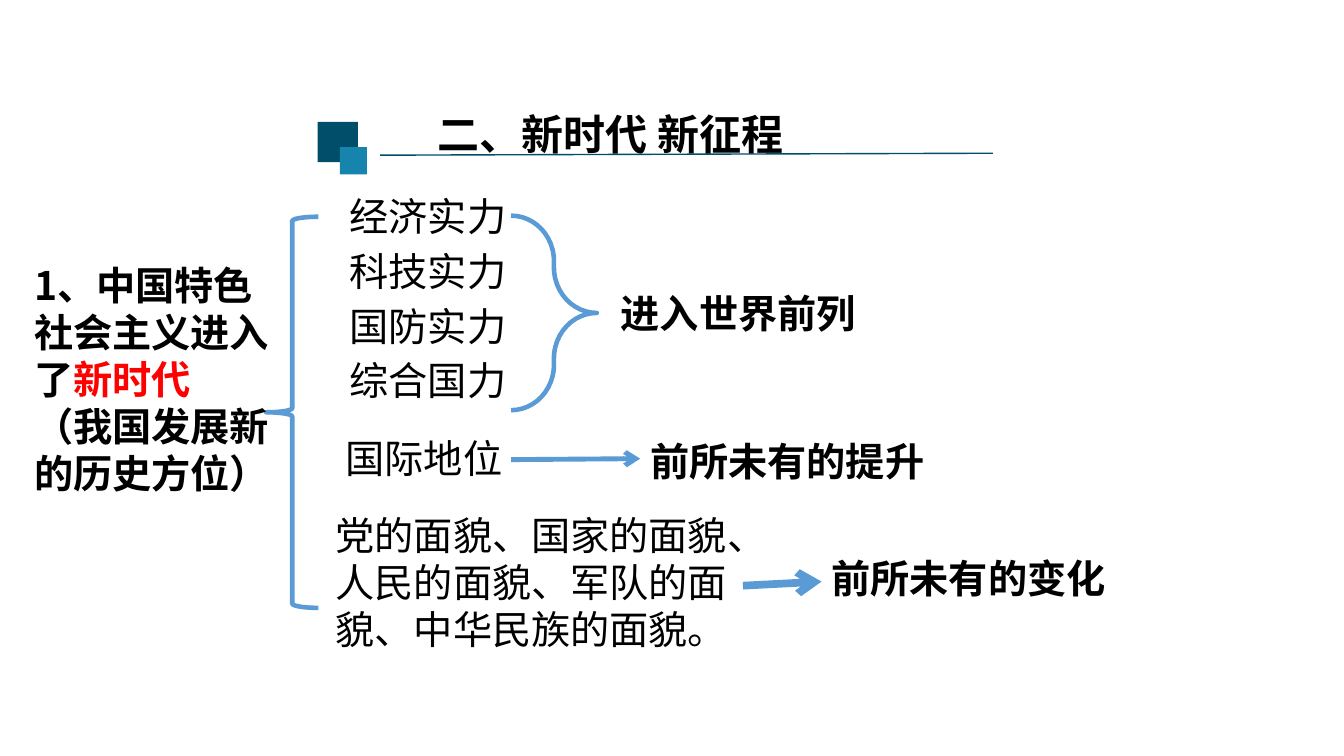
"""Build the slide on the new era: a brace diagram of strengths, standing and change."""
import pptx
import pptx.dml.color
import pptx.enum.shapes
import pptx.enum.text
import pptx.oxml.ns
import pptx.util
from lxml import etree

FONT = "Noto Sans CJK SC"
BLACK, RED, NAVY, TEAL, BLUE = "000000", "FF0000", "014E6A", "1784AD", "5B9BD5"
LINE_FACTOR = 1.2

# All places are percentages of the slide: left, top, width, height.
TITLE = ("二、新时代 新征程", (31.8, 13.33, 46.13, 10.93))
SQUARES = [(NAVY, (23.63, 16.13, 3, 5.33)), (TEAL, (25.28, 19.47, 2.03, 3.6))]
STRENGTHS = ["经济实力", "科技实力", "国防实力", "综合国力"]
STRENGTH_LEFT, STRENGTH_TOP, STRENGTH_STEP, STRENGTH_WIDTH = 25.28, 24.4, 7.24, 34.5
TOPIC = [
    [("1、中国特色", BLACK)],
    [("社会主义进入", BLACK)],
    [("了", BLACK), ("新时代", RED)],
    [("（我国发展新的历史方位）", BLACK)],
]
TOPIC_PLACE = (1.8, 33.47, 21, 24.13)
CAUSES = [
    ("国际地位", (24.98, 56.4, 16.73, 8.4)),
    ("党的面貌、国家的面貌、人民的面貌、军队的面貌、中华民族的面貌。", (24.23, 66.53, 32.18, 22)),
]
RESULTS = [
    ("进入世界前列", (45.45, 37.2, 19.95, 11.07)),
    ("前所未有的提升", (47.63, 56.8, 31.8, 9.47)),
    ("前所未有的变化", (61.13, 72.27, 34.13, 8.27)),
]
BRACES = [
    ("LEFT_BRACE", (19.8, 28.67, 3.9, 51.73), 0.08),
    ("RIGHT_BRACE", (38.03, 28.53, 6.38, 25.73), 0.53),
]
TITLE_RULE = (28.28, 20.53, 73.88, 20.27)
ARROWS = [((38.03, 60.8, 47.63, 60.67), 3.5), ((55.28, 77.47, 61.13, 76.93), 5.5)]

presentation = pptx.Presentation()
presentation.slide_width = pptx.util.Inches(13.33)
presentation.slide_height = pptx.util.Inches(7.5)
slide = presentation.slides.add_slide(presentation.slide_layouts[5])


def color(hex_text):
    return pptx.dml.color.RGBColor.from_string(hex_text)


def scaled(place):
    sides = (presentation.slide_width, presentation.slide_height) * 2
    return [round(side * share / 100) for side, share in zip(sides, place)]


def write(shape, paragraphs, size=28, bold=False):
    frame = shape.text_frame
    frame.word_wrap = True
    frame.auto_size = pptx.enum.text.MSO_AUTO_SIZE.NONE
    frame.vertical_anchor = pptx.enum.text.MSO_ANCHOR.TOP
    frame.margin_top = pptx.util.Inches(0.08)
    for index, runs in enumerate(paragraphs):
        paragraph = frame.add_paragraph() if index else frame.paragraphs[0]
        paragraph.alignment = pptx.enum.text.PP_ALIGN.LEFT
        paragraph.line_spacing = pptx.util.Pt(size * LINE_FACTOR)
        for text, hex_text in runs:
            run = paragraph.add_run()
            run.text = text
            run.font.size = pptx.util.Pt(size)
            run.font.bold = bold
            run.font.color.rgb = color(hex_text)
            run.font.name = FONT
            properties = run._r.get_or_add_rPr()
            etree.SubElement(properties, pptx.oxml.ns.qn("a:ea"), typeface=FONT)


def add_text(paragraphs, place, bold=False):
    write(slide.shapes.add_textbox(*scaled(place)), paragraphs, bold=bold)


def add_line(ends, hex_text, width, arrow=False):
    straight = pptx.enum.shapes.MSO_CONNECTOR.STRAIGHT
    connector = slide.shapes.add_connector(straight, *scaled(ends))
    connector.line.color.rgb = color(hex_text)
    connector.line.width = pptx.util.Pt(width)
    if arrow:
        outline = connector.line._get_or_add_ln()
        etree.SubElement(outline, pptx.oxml.ns.qn("a:tailEnd"), type="arrow")
    etree.SubElement(connector._element.spPr, pptx.oxml.ns.qn("a:effectLst"))


def add_square(group, hex_text, place):
    rectangle = pptx.enum.shapes.MSO_SHAPE.RECTANGLE
    square = group.shapes.add_shape(rectangle, *scaled(place))
    square.shadow.inherit = False
    square.fill.solid()
    square.fill.fore_color.rgb = color(hex_text)
    square.line.fill.background()


def add_brace(kind, place, curve):
    brace = slide.shapes.add_shape(pptx.enum.shapes.MSO_SHAPE[kind], *scaled(place))
    brace.shadow.inherit = False
    brace.adjustments[0] = curve
    brace.fill.background()
    brace.line.color.rgb = color(BLUE)
    brace.line.width = pptx.util.Pt(3.25)


def main():
    add_line(TITLE_RULE, NAVY, 1)
    marker = slide.shapes.add_group_shape()
    for hex_text, place in SQUARES:
        add_square(marker, hex_text, place)

    title_text, title_place = TITLE
    title = slide.shapes.title
    title.left, title.top, title.width, title.height = scaled(title_place)
    write(title, [[(title_text, BLACK)]], size=30, bold=True)

    for row, strength in enumerate(STRENGTHS):
        top = STRENGTH_TOP + row * STRENGTH_STEP
        place = (STRENGTH_LEFT, top, STRENGTH_WIDTH, STRENGTH_STEP)
        add_text([[(strength, BLACK)]], place)
    for text, place in CAUSES:
        add_text([[(text, BLACK)]], place)
    for text, place in RESULTS:
        add_text([[(text, BLACK)]], place, bold=True)
    for ends, width in ARROWS:
        add_line(ends, BLUE, width, arrow=True)
    for kind, place, curve in BRACES:
        add_brace(kind, place, curve)
    add_text(TOPIC, TOPIC_PLACE, bold=True)
    presentation.save("out.pptx")


if __name__ == "__main__":
    main()
